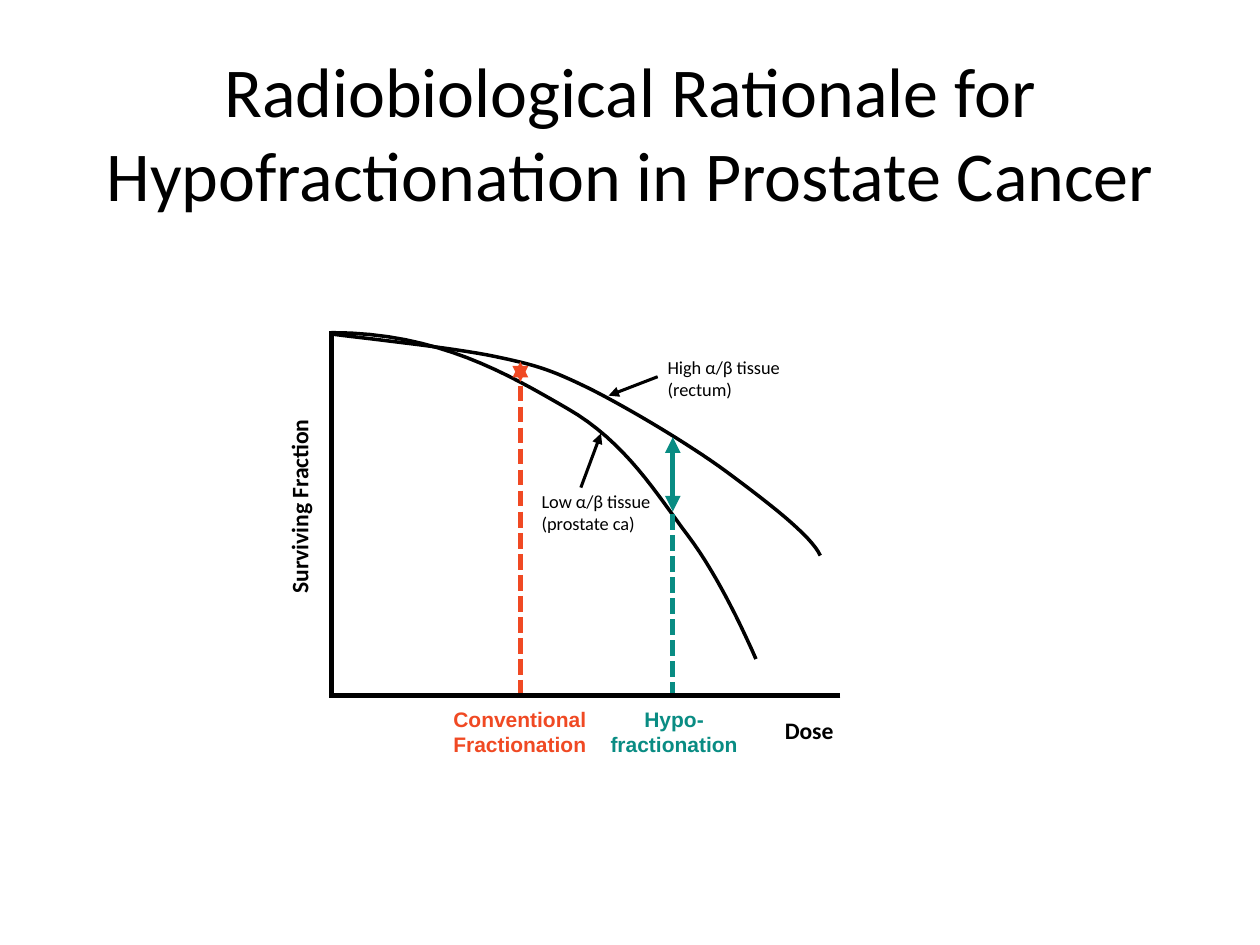
"""Build the slide on the radiobiological rationale for hypofractionation."""
from lxml.etree import SubElement
from pptx import Presentation
from pptx.dml.color import RGBColor
from pptx.enum.dml import MSO_LINE
from pptx.enum.shapes import MSO_CONNECTOR
from pptx.enum.text import MSO_AUTO_SIZE, PP_ALIGN
from pptx.oxml.ns import qn
from pptx.util import Inches, Pt

COLORS = {"ink": "000000", "conventional": "F04923", "hypo": "098C83"}
STEPS = 16

LOW_RATIO = [
    (2.63, 2.64), (3.48, 2.64), (4.03, 2.97), (4.5, 3.24), (4.97, 3.51),
    (5.21, 3.92), (5.46, 4.25), (5.71, 4.58), (5.93, 5.07), (6, 5.23),
]
HIGH_RATIO = [
    (2.62, 2.65), (2.84, 2.68), (3.6, 2.76), (3.93, 2.83), (4.26, 2.9),
    (4.36, 2.93), (4.67, 3.08), (4.97, 3.23), (5.46, 3.52), (5.76, 3.74),
    (6.07, 3.97), (6.44, 4.25), (6.51, 4.41),
]


def rgb(name):
    return RGBColor.from_string(COLORS[name])


def bezier_point(controls, t):
    weights = ((1 - t) ** 3, 3 * t * (1 - t) ** 2, 3 * t ** 2 * (1 - t), t ** 3)
    return tuple(
        Inches(sum(w * c[axis] for w, c in zip(weights, controls)))
        for axis in (0, 1)
    )


def add_curve(slide, controls):
    points = [
        bezier_point(controls[i:i + 4], step / STEPS)
        for i in range(0, len(controls) - 1, 3)
        for step in range(1, STEPS + 1)
    ]
    x, y = controls[0]
    builder = slide.shapes.build_freeform(Inches(x), Inches(y))
    builder.add_line_segments(points, close=False)
    sp = builder.convert_to_shape()
    sp.shadow.inherit = False
    sp.fill.background()
    sp.line.color.rgb = rgb("ink")
    sp.line.width = Pt(2)


def add_line(slide, start, end, color, width, dashed=False, arrows=()):
    line = slide.shapes.add_connector(
        MSO_CONNECTOR.STRAIGHT, *map(Inches, start + end)
    )
    line.line.color.rgb = rgb(color)
    line.line.width = Pt(width)
    if dashed:
        line.line.dash_style = MSO_LINE.SQUARE_DOT
    ln = line.line._get_or_add_ln()
    for arrow in arrows:
        SubElement(ln, qn(f"a:{arrow}"), type="triangle")
    SubElement(ln.getparent(), qn("a:effectLst"))


def add_label(slide, box, lines, size, color="ink", font="Calibri",
              bold=False, align=PP_ALIGN.LEFT, rotation=0):
    sp = slide.shapes.add_textbox(*map(Inches, box))
    sp.rotation = rotation
    tf = sp.text_frame
    tf.word_wrap = False
    tf.auto_size = MSO_AUTO_SIZE.SHAPE_TO_FIT_TEXT
    tf.text = "\n".join(lines)
    for p in tf.paragraphs:
        p.alignment = align
        p.font.name = font
        p.font.size = Pt(size)
        p.font.bold = bold
        p.font.color.rgb = rgb(color)


def set_title(slide, text):
    title = slide.shapes.title
    title.left, title.top = Inches(0.5), Inches(0.42)
    title.width, title.height = Inches(9), Inches(1.25)
    tf = title.text_frame
    tf.text = text
    tf.auto_size = MSO_AUTO_SIZE.NONE
    p = tf.paragraphs[0]
    p.alignment = PP_ALIGN.CENTER
    p.font.name = "Calibri"
    p.font.size = Pt(40)
    p.font.color.rgb = rgb("ink")


def main():
    prs = Presentation()
    prs.slide_width, prs.slide_height = Inches(10), Inches(7.5)
    slide = prs.slides.add_slide(prs.slide_layouts[5])
    set_title(slide, "Radiobiological Rationale for Hypofractionation in Prostate Cancer")

    add_curve(slide, LOW_RATIO)
    add_curve(slide, HIGH_RATIO)

    add_line(slide, (4.13, 3.06), (4.13, 5.54), "conventional", 3, dashed=True)
    add_label(slide, (3.5, 5.56, 1.27, 0.5), ["Conventional", "Fractionation"],
              12, "conventional", "Arial", bold=True)
    add_line(slide, (5.34, 4.08), (5.34, 5.53), "hypo", 3, dashed=True)
    add_label(slide, (4.74, 5.56, 1.22, 0.5), ["Hypo-", "fractionation"],
              12, "hypo", "Arial", bold=True, align=PP_ALIGN.CENTER)

    add_line(slide, (2.63, 2.63), (2.63, 5.52), "ink", 2.75)
    add_line(slide, (6.67, 5.52), (2.61, 5.52), "ink", 2.75)
    add_label(slide, (5.2, 2.78, 1.11, 0.45), ["High α/β tissue", "(rectum)"], 10.5)
    add_label(slide, (4.2, 3.84, 1.08, 0.45), ["Low α/β tissue", "(prostate ca)"], 10.5)
    add_line(slide, (5.22, 2.99), (4.83, 3.14), "ink", 1.75, arrows=["tailEnd"])
    add_line(slide, (4.61, 3.87), (4.77, 3.44), "ink", 1.75, arrows=["tailEnd"])
    add_label(slide, (1.57, 3.84, 1.61, 0.33), ["Surviving Fraction"], 13.5,
              bold=True, rotation=270)
    add_label(slide, (6.13, 5.63, 0.59, 0.33), ["Dose"], 13.5, bold=True)

    both_ends = ["headEnd", "tailEnd"]
    add_line(slide, (4.13, 2.87), (4.13, 3.03), "conventional", 3, arrows=both_ends)
    add_line(slide, (5.34, 3.47), (5.34, 4.06), "hypo", 3, arrows=both_ends)
    prs.save("out.pptx")


if __name__ == "__main__":
    main()
